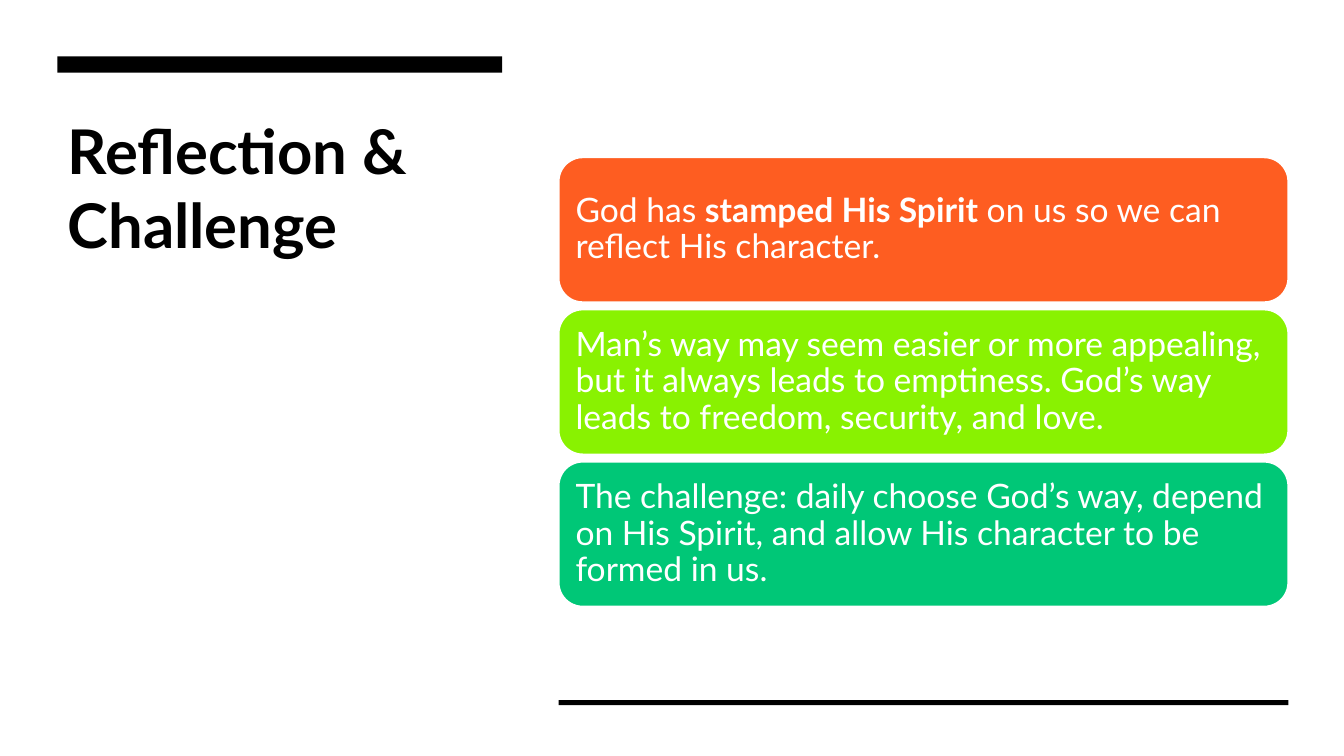
from pptx import Presentation
from pptx.dml.color import RGBColor
from pptx.enum.shapes import MSO_SHAPE as Shape
from pptx.enum.text import MSO_ANCHOR as Anchor, MSO_AUTO_SIZE as AutoSize, PP_ALIGN as Align
from pptx.util import Inches, Pt

BLACK = RGBColor(0x00, 0x00, 0x00)
WHITE = RGBColor(0xFF, 0xFF, 0xFF)
ORANGE = RGBColor(0xFE, 0x5D, 0x21)
LIME = RGBColor(0x89, 0xF2, 0x01)
GREEN = RGBColor(0x00, 0xC7, 0x77)

TITLE_ONLY = 5
# Shares of the slide, in percent
LEFT_COLUMN = (4.28, 33.08)
RIGHT_COLUMN = (41.56, 54.31)
CARD_TOP, CARD_HEIGHT, CARD_STEP = 20.8, 19.2, 20.13

CARDS = [
    (ORANGE, [("God has ", False), ("stamped His Spirit", True),
              (" on us so we can reflect His character.", False)]),
    (LIME, [("Man’s way may seem easier or more appealing, but it always leads "
             "to emptiness. God’s way leads to freedom, security, and love.", False)]),
    (GREEN, [("The challenge: daily choose God’s way, depend on His Spirit, and "
              "allow His character to be formed in us.", False)]),
]


def write(shape, spans, size, color, anchor, spacing=1.0, after=0):
    """Fill a shape with one left-aligned paragraph of (text, bold) spans."""
    frame = shape.text_frame
    frame.word_wrap = True
    frame.auto_size = AutoSize.NONE
    frame.vertical_anchor = anchor
    para = frame.paragraphs[0]
    para.alignment = Align.LEFT
    para.line_spacing = spacing
    para.space_after = Pt(after)
    for text, bold in spans:
        span = para.add_run()
        span.text = text
        font = span.font
        font.name, font.size, font.bold = "Lato", Pt(size), bold
        font.color.rgb = color


class SlideBuilder:
    def __init__(self, deck):
        self.deck = deck
        self.page = deck.slides.add_slide(deck.slide_layouts[TITLE_ONLY])
        background = self.page.background.fill
        background.solid()
        background.fore_color.rgb = WHITE

    def place(self, column, top, height):
        """Turn a column and percent heights into left, top, width, height."""
        left, width = column
        across, down = self.deck.slide_width / 100, self.deck.slide_height / 100
        return (round(left * across), round(top * down),
                round(width * across), round(height * down))

    def title(self, text, column, top, height):
        box = self.page.shapes.title
        box.left, box.top, box.width, box.height = self.place(column, top, height)
        write(box, [(text, True)], 44, BLACK, Anchor.TOP)

    def block(self, kind, color, column, top, height):
        shape = self.page.shapes.add_shape(kind, *self.place(column, top, height))
        shape.shadow.inherit = False
        shape.fill.solid()
        shape.fill.fore_color.rgb = color
        shape.line.fill.background()
        return shape

    def bar(self, column, top, height):
        self.block(Shape.RECTANGLE, BLACK, column, top, height)

    def card(self, color, spans, column, top, height):
        card = self.block(Shape.ROUNDED_RECTANGLE, color, column, top, height)
        card.line.color.rgb = WHITE
        card.line.width = Pt(1.5)
        frame = card.text_frame
        frame.margin_left = frame.margin_right = Inches(0.1)
        frame.margin_top = frame.margin_bottom = Inches(0.1)
        write(card, spans, 24, WHITE, Anchor.MIDDLE, spacing=0.9, after=8.4)


def main():
    deck = Presentation()
    deck.slide_width, deck.slide_height = Inches(13.33), Inches(7.5)
    slide = SlideBuilder(deck)
    slide.title("Reflection & Challenge", LEFT_COLUMN, 14.27, 49.07)
    slide.bar(LEFT_COLUMN, 7.47, 2.13)
    slide.bar(RIGHT_COLUMN, 92.6, 0.67)
    for row, (color, spans) in enumerate(CARDS):
        slide.card(color, spans, RIGHT_COLUMN, CARD_TOP + row * CARD_STEP, CARD_HEIGHT)
    deck.save("out.pptx")


if __name__ == "__main__":
    main()
